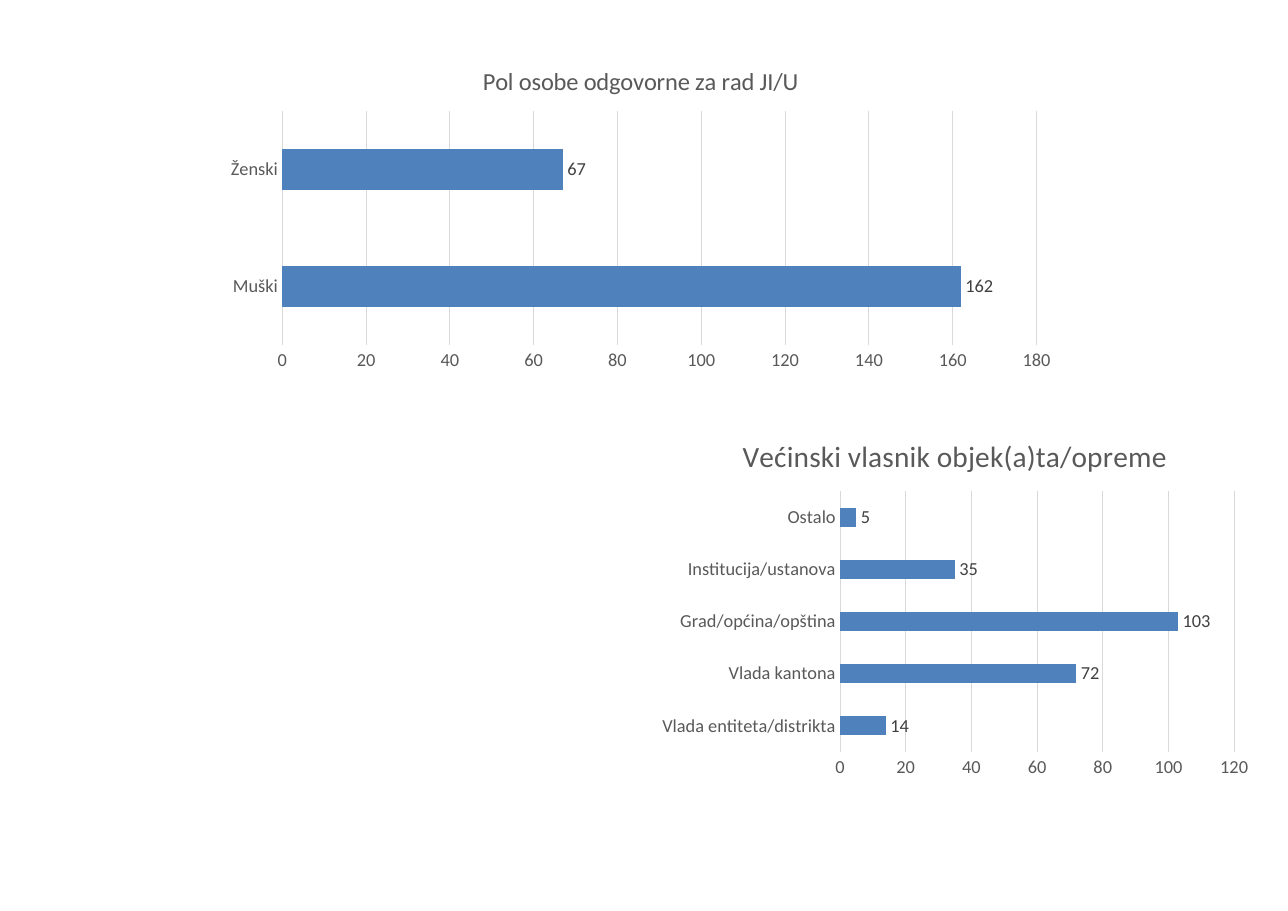
from dataclasses import dataclass

from pptx import Presentation
from pptx.chart.data import CategoryChartData
from pptx.dml.color import RGBColor
from pptx.enum.chart import XL_CHART_TYPE, XL_LABEL_POSITION, XL_TICK_MARK
from pptx.oxml import parse_xml
from pptx.oxml.ns import nsdecls, qn
from pptx.util import Inches, Pt


@dataclass(frozen=True)
class Theme:
    face: str = "Calibri"
    back: str = "FFFFFF"
    base: str = "000000"
    bar: str = "4F81BD"
    grid: str = "D9D9D9"
    text: str = "595959"
    value: str = "404040"
    tiny: float = 10
    small: float = 12
    head: float = 16
    large: float = 19.2
    rule: float = 0.75


THEME = Theme()

CHARTS = [
    {
        "title": "Većinski vlasnik objek(a)ta/opreme",
        "size": THEME.large,
        "base": THEME.head,
        "box": (5.9, 3.78, 5.54, 3.35),
        "top": 120,
        "rows": {
            "Vlada entiteta/distrikta": 14,
            "Vlada kantona": 72,
            "Grad/općina/opština": 103,
            "Institucija/ustanova": 35,
            "Ostalo": 5,
        },
    },
    {
        "title": "Pol osobe odgovorne za rad JI/U",
        "size": THEME.head,
        "base": THEME.tiny,
        "box": (1.94, 0.43, 7.75, 3),
        "top": 180,
        "rows": {"Muški": 162, "Ženski": 67},
    },
]


def apply(item, form):
    for name, value in form.items():
        setattr(item, name, value)


def style_font(font, size, color):
    apply(font, {"name": THEME.face, "size": Pt(size), "bold": False})
    font.color.rgb = RGBColor.from_string(color)


def style_line(line):
    line.width = Pt(THEME.rule)
    line.color.rgb = RGBColor.from_string(THEME.grid)


def style_back(chart):
    chart.element.find(qn("c:chart")).addnext(parse_xml(
        f'<c:spPr {nsdecls("c", "a")}>'
        f'<a:solidFill><a:srgbClr val="{THEME.back}"/></a:solidFill>'
        "<a:ln><a:noFill/></a:ln></c:spPr>"
    ))


def style_title(chart, text, size):
    chart.has_title = True
    frame = chart.chart_title.text_frame
    frame.text = text
    style_font(frame.paragraphs[0].runs[0].font, size, THEME.text)
    chart.chart_title.include_in_layout = False


def style_axes(chart, top):
    ticks = {
        "major_tick_mark": XL_TICK_MARK.NONE,
        "minor_tick_mark": XL_TICK_MARK.NONE,
    }
    names, scale = chart.category_axis, chart.value_axis
    for axis in (names, scale):
        apply(axis, ticks)
        style_font(axis.tick_labels.font, THEME.small, THEME.text)
    style_line(names.format.line)
    apply(scale, {
        "minimum_scale": 0,
        "maximum_scale": top,
        "major_unit": 20,
        "has_major_gridlines": True,
    })
    scale.format.line.fill.background()
    style_line(scale.major_gridlines.format.line)


def style_bars(plot):
    apply(plot, {
        "gap_width": 182,
        "vary_by_categories": False,
        "has_data_labels": True,
    })
    fill = plot.series[0].format.fill
    fill.solid()
    fill.fore_color.rgb = RGBColor.from_string(THEME.bar)
    labels = plot.data_labels
    apply(labels, {
        "show_value": True,
        "position": XL_LABEL_POSITION.OUTSIDE_END,
    })
    style_font(labels.font, THEME.small, THEME.value)


def add_bars(slide, title, size, base, box, top, rows):
    data = CategoryChartData()
    data.categories = list(rows)
    data.add_series(title, list(rows.values()))
    place = [Inches(side) for side in box]
    chart = slide.shapes.add_chart(XL_CHART_TYPE.BAR_CLUSTERED, *place, data).chart
    chart.has_legend = False
    style_font(chart.font, base, THEME.base)
    style_back(chart)
    style_title(chart, title, size)
    style_axes(chart, top)
    style_bars(chart.plots[0])


def main():
    deck = Presentation()
    apply(deck, {"slide_width": Inches(11.69), "slide_height": Inches(8.27)})
    slide = deck.slides.add_slide(deck.slide_layouts.get_by_name("Blank"))
    for chart in CHARTS:
        add_bars(slide, **chart)
    deck.save("out.pptx")


if __name__ == "__main__":
    main()
